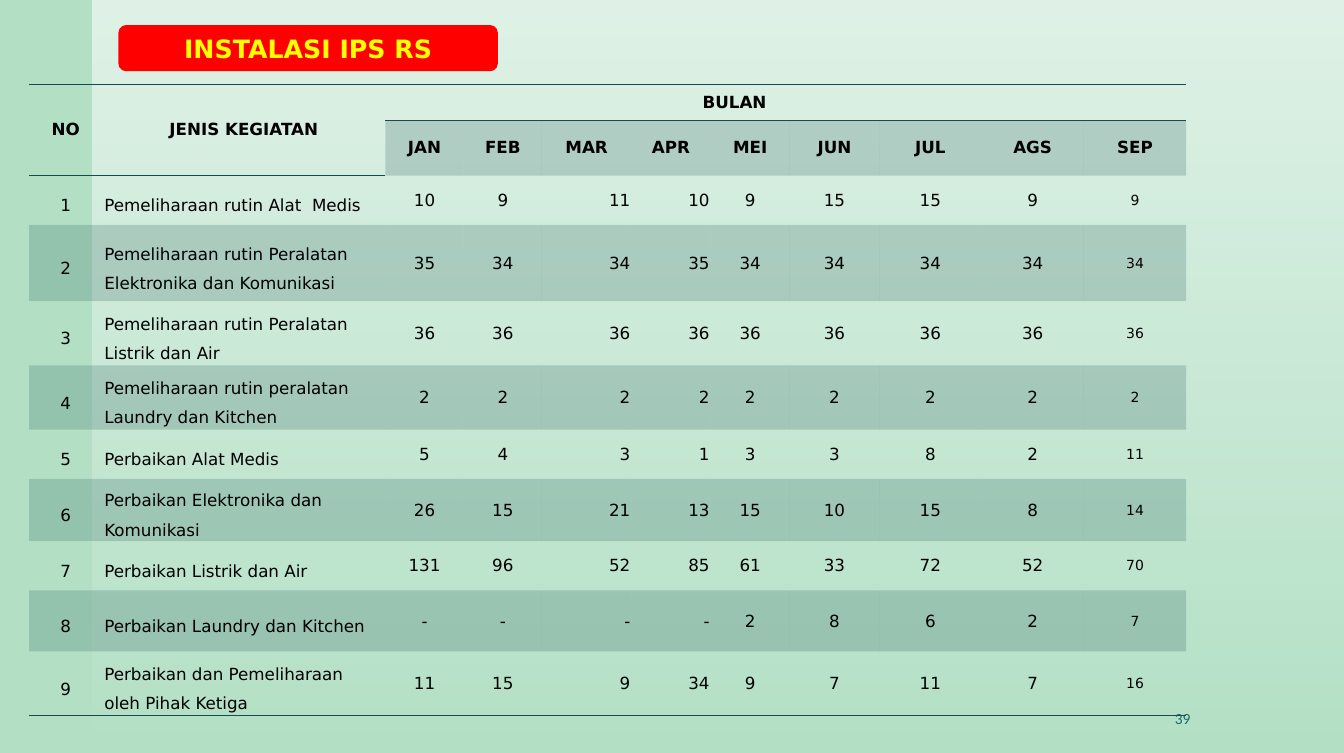
from dataclasses import dataclass

import lxml.etree
import pptx
import pptx.dml.color
import pptx.enum.shapes
import pptx.enum.text
import pptx.oxml.ns
import pptx.slide
import pptx.table
import pptx.text.text
import pptx.util

EMU_PER_PX = 9144
ALIGN = pptx.enum.text.PP_ALIGN
MIDDLE = pptx.enum.text.MSO_ANCHOR.MIDDLE
SHAPE = pptx.enum.shapes.MSO_SHAPE
NO_GRID_STYLE = "{2D5ABB26-0587-4C30-8999-92F81FD0307C}"


@dataclass(frozen=True)
class Theme:
    backdrop: str = "B3E0C5"
    glow: str = "FFFFFF"
    banner: str = "FF0000"
    title: str = "FFFF00"
    ink: str = "000000"
    rule: str = "164B4F"
    page_number: str = "1F696F"
    font: str = "DejaVu Sans"
    number_font: str = "Calibri"
    title_size: float = 18.1
    table_size: float = 12
    last_month_size: float = 10
    number_size: float = 11.1


@dataclass(frozen=True)
class Box:
    left: int
    top: int
    width: int
    height: int

    def emu(self) -> tuple[int, int, int, int]:
        return px(self.left), px(self.top), px(self.width), px(self.height)


@dataclass(frozen=True)
class TextStyle:
    size: float
    color: str
    bold: bool = False
    font: str = "DejaVu Sans"
    align: ALIGN = ALIGN.CENTER
    spacing: float = 1.0


@dataclass(frozen=True)
class Activity:
    name: str
    counts: str


THEME = Theme()
PANEL = Box(92, 0, 1247, 750)
BANNER = Box(118, 25, 378, 46)
TABLE = Box(29, 84, 1152, 630)
PAGE_NUMBER = Box(884, 695, 312, 40)
COLUMN_WIDTHS = [73, 282, 78, 78, 89, 79, 79, 89, 102, 102, 102]
ROW_HEIGHTS = [36, 55, 49, 76, 64, 64, 49, 62, 49, 61, 64]
MONTHS = "JAN FEB MAR APR MEI JUN JUL AGS SEP".split()
RIGHT_ALIGNED = {"MAR", "APR"}
ACTIVITIES = [
    Activity("Pemeliharaan rutin Alat  Medis", "10 9 11 10 9 15 15 9 9"),
    Activity("Pemeliharaan rutin Peralatan Elektronika dan Komunikasi", "35 34 34 35 34 34 34 34 34"),
    Activity("Pemeliharaan rutin Peralatan Listrik dan Air", "36 36 36 36 36 36 36 36 36"),
    Activity("Pemeliharaan rutin peralatan Laundry dan Kitchen", "2 2 2 2 2 2 2 2 2"),
    Activity("Perbaikan Alat Medis", "5 4 3 1 3 3 8 2 11"),
    Activity("Perbaikan Elektronika dan Komunikasi", "26 15 21 13 15 10 15 8 14"),
    Activity("Perbaikan Listrik dan Air", "131 96 52 85 61 33 72 52 70"),
    Activity("Perbaikan Laundry dan Kitchen", "- - - - 2 8 6 2 7"),
    Activity("Perbaikan dan Pemeliharaan oleh Pihak Ketiga", "11 15 9 34 9 7 11 7 16"),
]


def px(length: int) -> int:
    return length * EMU_PER_PX


def rgb(color: str) -> pptx.dml.color.RGBColor:
    return pptx.dml.color.RGBColor.from_string(color)


def add_child(parent, tag: str, **attributes: str):
    return lxml.etree.SubElement(parent, pptx.oxml.ns.qn(tag), attributes)


def set_alpha(color_element, percent: int) -> None:
    add_child(color_element, "a:alpha", val=str(percent * 1000))


def write(frame: pptx.text.text.TextFrame, text: str, style: TextStyle) -> None:
    frame.word_wrap = True
    para = frame.paragraphs[0]
    para.alignment = style.align
    para.line_spacing = style.spacing
    span = para.add_run()
    span.text = text
    span.font.name = style.font
    span.font.size = pptx.util.Pt(style.size)
    span.font.bold = style.bold
    span.font.color.rgb = rgb(style.color)


def add_block(page: pptx.slide.Slide, kind: SHAPE, box: Box):
    block = page.shapes.add_shape(kind, *box.emu())
    block.shadow.inherit = False
    block.line.fill.background()
    return block


def add_panel(page: pptx.slide.Slide) -> None:
    fill = add_block(page, SHAPE.RECTANGLE, PANEL).fill
    fill.gradient()
    fill.gradient_angle = 270
    for stop, position, alpha in zip(fill.gradient_stops, (0, 1), (60, 0)):
        stop.position = position
        stop.color.rgb = rgb(THEME.glow)
        set_alpha(stop._gs[0], alpha)


def add_title(page: pptx.slide.Slide) -> None:
    banner = add_block(page, SHAPE.ROUNDED_RECTANGLE, BANNER)
    banner.fill.solid()
    banner.fill.fore_color.rgb = rgb(THEME.banner)
    title = page.shapes.title
    title.left, title.top, title.width, title.height = BANNER.emu()
    title.text_frame.auto_size = pptx.enum.text.MSO_AUTO_SIZE.NONE
    title.text_frame.vertical_anchor = MIDDLE
    write(title.text_frame, "INSTALASI IPS RS", TextStyle(THEME.title_size, THEME.title, bold=True))
    page.shapes._spTree.append(title._element)


def add_rule(cell: pptx.table._Cell, tag: str) -> None:
    line = add_child(cell._tc.get_or_add_tcPr(), tag, w=str(pptx.util.Pt(1)))
    add_child(add_child(line, "a:solidFill"), "a:srgbClr", val=THEME.rule)


def set_margins(cell: pptx.table._Cell, side: int, top: int, bottom: int) -> None:
    cell.margin_left = cell.margin_right = px(side)
    cell.margin_top, cell.margin_bottom = px(top), px(bottom)


def cell_style(row: int, column: int) -> TextStyle:
    if row < 2:
        return TextStyle(THEME.table_size, THEME.ink, bold=True)
    if column < 2:
        align = ALIGN.LEFT if column else ALIGN.CENTER
        return TextStyle(THEME.table_size, THEME.ink, align=align, spacing=1.5)
    month = MONTHS[column - 2]
    size = THEME.last_month_size if month == MONTHS[-1] else THEME.table_size
    return TextStyle(size, THEME.ink, align=ALIGN.RIGHT if month in RIGHT_ALIGNED else ALIGN.CENTER)


def format_cell(cell: pptx.table._Cell, row: int, column: int, text: str) -> None:
    cell.vertical_anchor = MIDDLE
    if row < 2:
        set_margins(cell, 20, 8, 8)
    elif column < 2:
        set_margins(cell, 2, 2, 0)
    else:
        set_margins(cell, 1, 1, 0)
    if row == 0:
        add_rule(cell, "a:lnT")
    if row in (0, len(ROW_HEIGHTS) - 1):
        add_rule(cell, "a:lnB")
    if row % 2 and not cell.is_spanned:
        cell.fill.solid()
        cell.fill.fore_color.rgb = rgb(THEME.rule)
        set_alpha(cell._tc.tcPr.find(".//" + pptx.oxml.ns.qn("a:solidFill") + "[last()]")[0], 20)
    else:
        cell.fill.background()
    if text:
        write(cell.text_frame, text, cell_style(row, column))
    else:
        add_child(cell.text_frame.paragraphs[0]._p, "a:endParaRPr", sz=str(int(THEME.table_size * 100)))


def add_activity_table(page: pptx.slide.Slide) -> None:
    rows = [["NO", "JENIS KEGIATAN", "BULAN"] + [""] * 8, ["", ""] + MONTHS]
    rows += [[str(number), item.name] + item.counts.split() for number, item in enumerate(ACTIVITIES, 1)]
    table = page.shapes.add_table(len(rows), len(COLUMN_WIDTHS), *TABLE.emu()).table
    table.first_row = table.horz_banding = False
    table._tbl.tblPr.find(pptx.oxml.ns.qn("a:tableStyleId")).text = NO_GRID_STYLE
    for column, width in zip(table.columns, COLUMN_WIDTHS):
        column.width = px(width)
    for row, height in zip(table.rows, ROW_HEIGHTS):
        row.height = px(height)
    for column in range(2):
        table.cell(0, column).merge(table.cell(1, column))
    table.cell(0, 2).merge(table.cell(0, 9))
    for row, texts in enumerate(rows):
        for column, text in enumerate(texts):
            format_cell(table.cell(row, column), row, column, text)


def add_page_number(page: pptx.slide.Slide) -> None:
    frame = page.shapes.add_textbox(*PAGE_NUMBER.emu()).text_frame
    frame.vertical_anchor = MIDDLE
    write(frame, "39", TextStyle(THEME.number_size, THEME.page_number, font=THEME.number_font, align=ALIGN.RIGHT))


def main() -> None:
    deck = pptx.Presentation()
    deck.slide_width, deck.slide_height = px(1339), px(750)
    page = deck.slides.add_slide(deck.slide_layouts[5])
    page.background.fill.solid()
    page.background.fill.fore_color.rgb = rgb(THEME.backdrop)
    add_panel(page)
    add_page_number(page)
    add_activity_table(page)
    add_title(page)
    deck.save("out.pptx")


if __name__ == "__main__":
    main()
